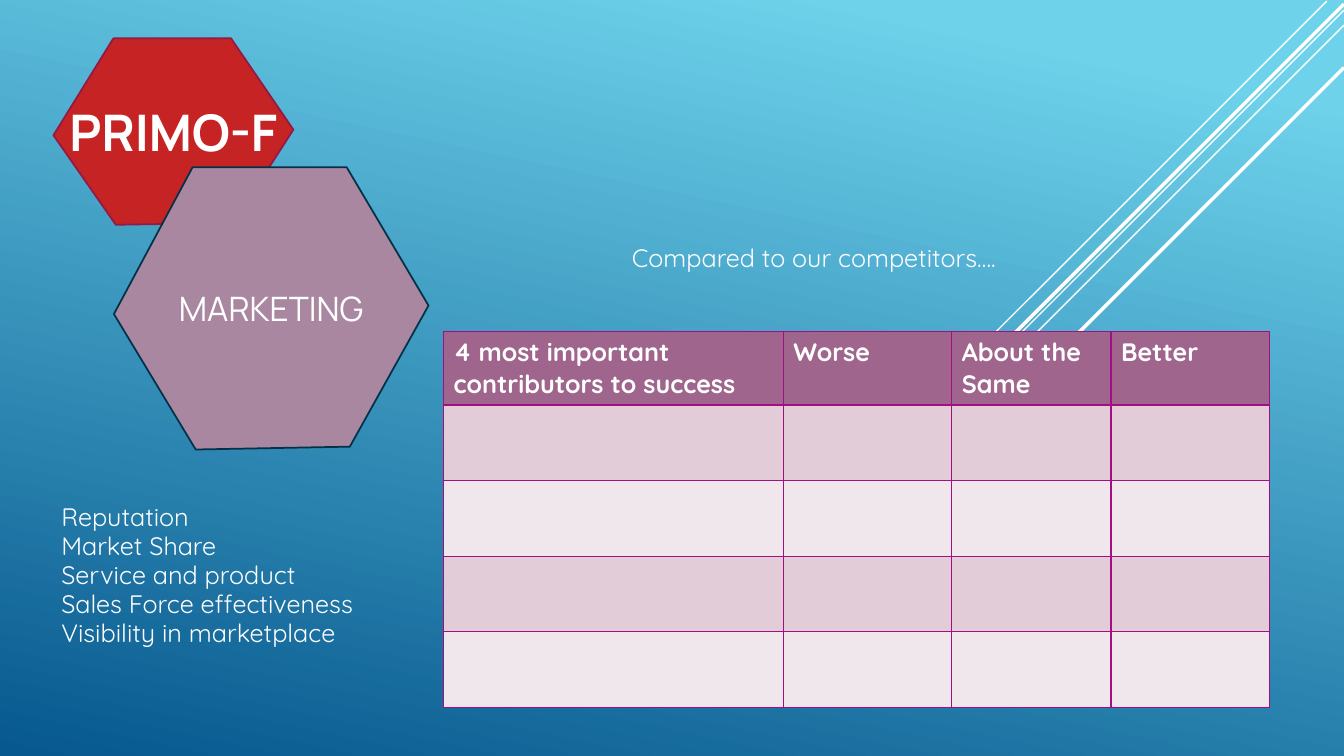
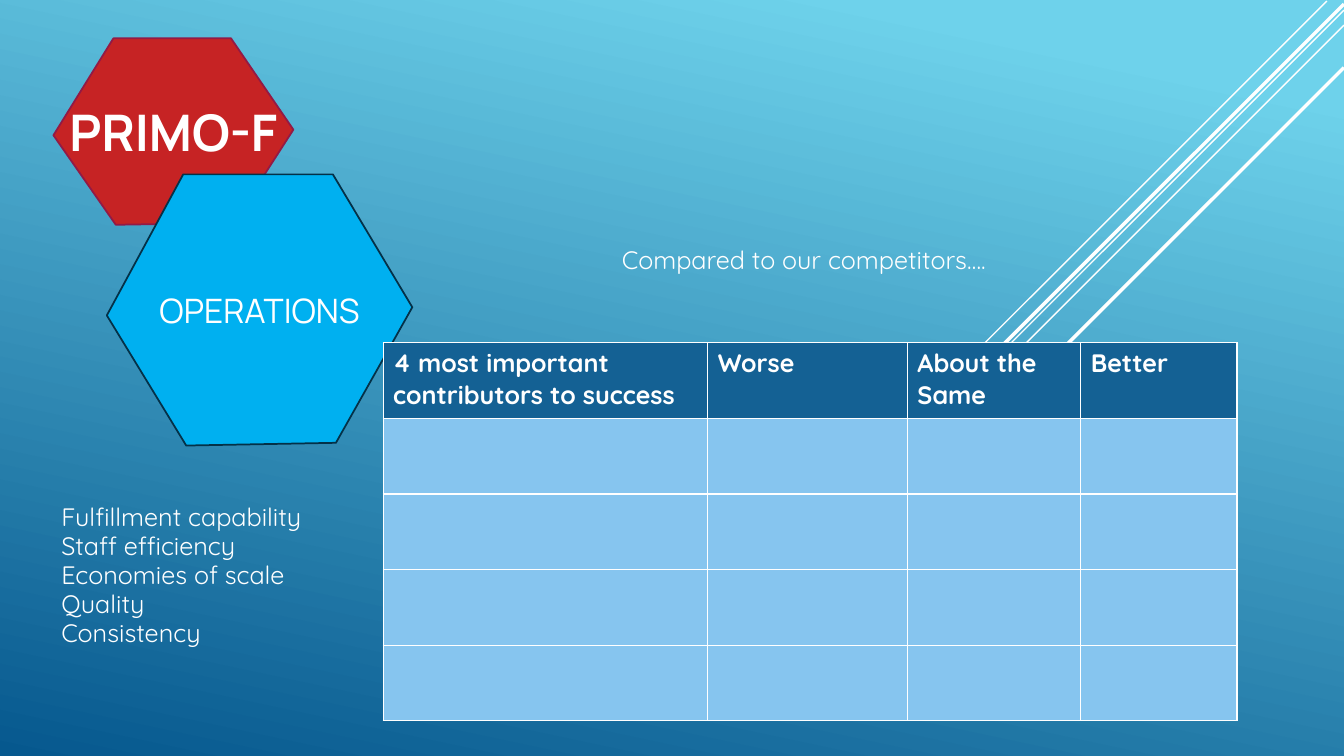
import pptx
import pptx.dml.color
import pptx.enum.shapes
import pptx.enum.text
import pptx.util
from lxml import etree
from pptx.oxml.ns import qn
from pptx.util import Inches, Pt

COLORS = {
    "sky": "6ED2EB", "deep": "06588E", "white": "FFFFFF",
    "red": "C62324", "red_edge": "921A46", "topic_edge": "043148",
    "mauve": "A987A0", "plum": "9F658C", "magenta": "A50E82",
    "pink": "E1CCD8", "pale_pink": "F0E7ED",
    "azure": "00B0F0", "navy": "146194", "light_blue": "86C5EF",
}
HEADING_FONT = "Manrope"
BODY_FONT = "Quicksand"

BRAND = "PRIMO-F"
BRAND_BOX = (0.53, 0.38, 2.38, 1.85)
PROMPT = "Compared to our competitors…."
PROMPT_SIZE = (6.07, 0.71)
FACTORS_BOX = (0.51, 4.94, 6.67, 1.92)
HEADERS = ["4 most important contributors to success", "Worse", "About the Same", "Better"]
ANSWER_ROWS = 4
ANSWER_HEIGHT = 0.75

# Hexagon corners as fractions of the box's width and height
HEXAGON = [(0.25, 0), (0.74, 0), (1, 0.49), (0.75, 0.99), (0.26, 1), (0, 0.52)]

# Diagonal rays: start x, start y, horizontal run (each falls at 45 degrees), weight
RAYS = [
    (13.16, 0.01, 4.16, 1),
    (13.33, 0.1, 6.65, 1),
    (13.33, 0.25, 5.42, 1),
    (13.33, 0.04, 5.31, 2.5),
    (13.33, 0.67, 4.75, 2.5),
]

TOPICS = [
    {
        "title": "MARKETING", "box": (1.13, 1.66, 3.12, 2.8), "fill": "mauve",
        "factors": ["Reputation", "Market Share", "Service and product",
                    "Sales Force effectiveness", "Visibility in marketplace"],
        "prompt_at": (6.17, 2.35),
        "table_at": (4.4, 3.29), "columns": [3.37, 1.67, 1.58, 1.57], "header_height": 0.68,
        "header": "plum", "bands": ["pink", "pale_pink"], "border": "magenta",
    },
    {
        "title": "OPERATIONS", "box": (1.06, 1.73, 3.03, 2.69), "fill": "azure",
        "factors": ["Fulfillment capability", "Staff efficiency", "Economies of scale",
                    "Quality", "Consistency"],
        "prompt_at": (6.07, 2.37),
        "table_at": (3.8, 3.4), "columns": [3.22, 1.98, 1.72, 1.55], "header_height": 0.75,
        "header": "navy", "bands": ["light_blue"], "border": "white",
    },
]


def rgb(name):
    return pptx.dml.color.RGBColor.from_string(COLORS[name])


def inches(values):
    return [Inches(value) for value in values]


def set_font(paragraph, size, family, bold=False):
    font = paragraph.font
    font.size, font.name, font.bold = Pt(size), family, bold
    font.color.rgb = rgb("white")


def paint_background(master):
    fill = master.background.fill
    fill.gradient()
    fill.gradient_angle = 258
    for stop, position, name in zip(fill.gradient_stops, (0.1, 1), ("sky", "deep")):
        stop.position = position
        stop.color.rgb = rgb(name)


def add_rays(slide):
    for x, y, run, weight in RAYS:
        ray = slide.shapes.add_connector(
            pptx.enum.shapes.MSO_CONNECTOR.STRAIGHT, *inches((x, y, x - run, y + run)))
        ray.line.color.rgb = rgb("white")
        ray.line.width = Pt(weight)
        etree.SubElement(ray._element.spPr, qn("a:effectLst"))


def add_hexagon(slide, box, fill, edge):
    left, top, width, height = box
    corners = [inches((left + fx * width, top + fy * height)) for fx, fy in HEXAGON]
    builder = slide.shapes.build_freeform(*corners[0])
    builder.add_line_segments(corners[1:], close=True)
    hexagon = builder.convert_to_shape()
    hexagon.shadow.inherit = False
    hexagon.fill.solid()
    hexagon.fill.fore_color.rgb = rgb(fill)
    hexagon.line.color.rgb = rgb(edge)
    hexagon.line.width = Pt(1.25)
    return hexagon


def write_centered(shape, text, size, bold=False):
    frame = shape.text_frame
    frame.text = text
    frame.word_wrap = True
    frame.vertical_anchor = pptx.enum.text.MSO_ANCHOR.MIDDLE
    paragraph = frame.paragraphs[0]
    paragraph.alignment = pptx.enum.text.PP_ALIGN.CENTER
    set_font(paragraph, size, HEADING_FONT, bold)


def add_title(slide, text, box, behind):
    """Lay the title placeholder over its hexagon."""
    title = slide.shapes.title
    title.left, title.top, title.width, title.height = inches(box)
    write_centered(title, text, 24)
    behind._element.addnext(title._element)


def add_text(slide, lines, box, spacing=1.0):
    frame = slide.shapes.add_textbox(*inches(box)).text_frame
    frame.word_wrap = True
    frame.text = "\n".join(lines)
    for paragraph in frame.paragraphs:
        paragraph.line_spacing = spacing
        set_font(paragraph, 18, BODY_FONT)


def set_borders(cell, name):
    properties = cell._tc.get_or_add_tcPr()
    for index, side in enumerate(("a:lnL", "a:lnR", "a:lnT", "a:lnB")):
        border = etree.Element(qn(side), w=str(Pt(1)))
        fill = etree.SubElement(border, qn("a:solidFill"))
        etree.SubElement(fill, qn("a:srgbClr"), val=COLORS[name])
        properties.insert(index, border)


def add_rating_table(slide, topic):
    heights = [topic["header_height"]] + [ANSWER_HEIGHT] * ANSWER_ROWS
    widths = topic["columns"]
    box = (*topic["table_at"], sum(widths), sum(heights))
    table = slide.shapes.add_table(len(heights), len(widths), *inches(box)).table
    for column, width in zip(table.columns, widths):
        column.width = Inches(width)
    bands = topic["bands"]
    for index, (row, height) in enumerate(zip(table.rows, heights)):
        row.height = Inches(height)
        name = bands[(index - 1) % len(bands)] if index else topic["header"]
        for cell in row.cells:
            cell.fill.solid()
            cell.fill.fore_color.rgb = rgb(name)
            set_borders(cell, topic["border"])
    for cell, header in zip(table.rows[0].cells, HEADERS):
        cell.text = header
        set_font(cell.text_frame.paragraphs[0], 18, BODY_FONT, bold=True)


def add_topic_slide(presentation, topic):
    slide = presentation.slides.add_slide(presentation.slide_layouts[5])
    add_rays(slide)
    brand = add_hexagon(slide, BRAND_BOX, "red", "red_edge")
    write_centered(brand, BRAND, 36, bold=True)
    hexagon = add_hexagon(slide, topic["box"], topic["fill"], "topic_edge")
    add_title(slide, topic["title"], topic["box"], hexagon)
    add_rating_table(slide, topic)
    add_text(slide, topic["factors"], FACTORS_BOX, spacing=0.96)
    add_text(slide, [PROMPT], (*topic["prompt_at"], *PROMPT_SIZE))


def main():
    presentation = pptx.Presentation()
    presentation.slide_width = Inches(13.33)
    presentation.slide_height = Inches(7.5)
    paint_background(presentation.slide_master)
    for topic in TOPICS:
        add_topic_slide(presentation, topic)
    presentation.save("out.pptx")


if __name__ == "__main__":
    main()
